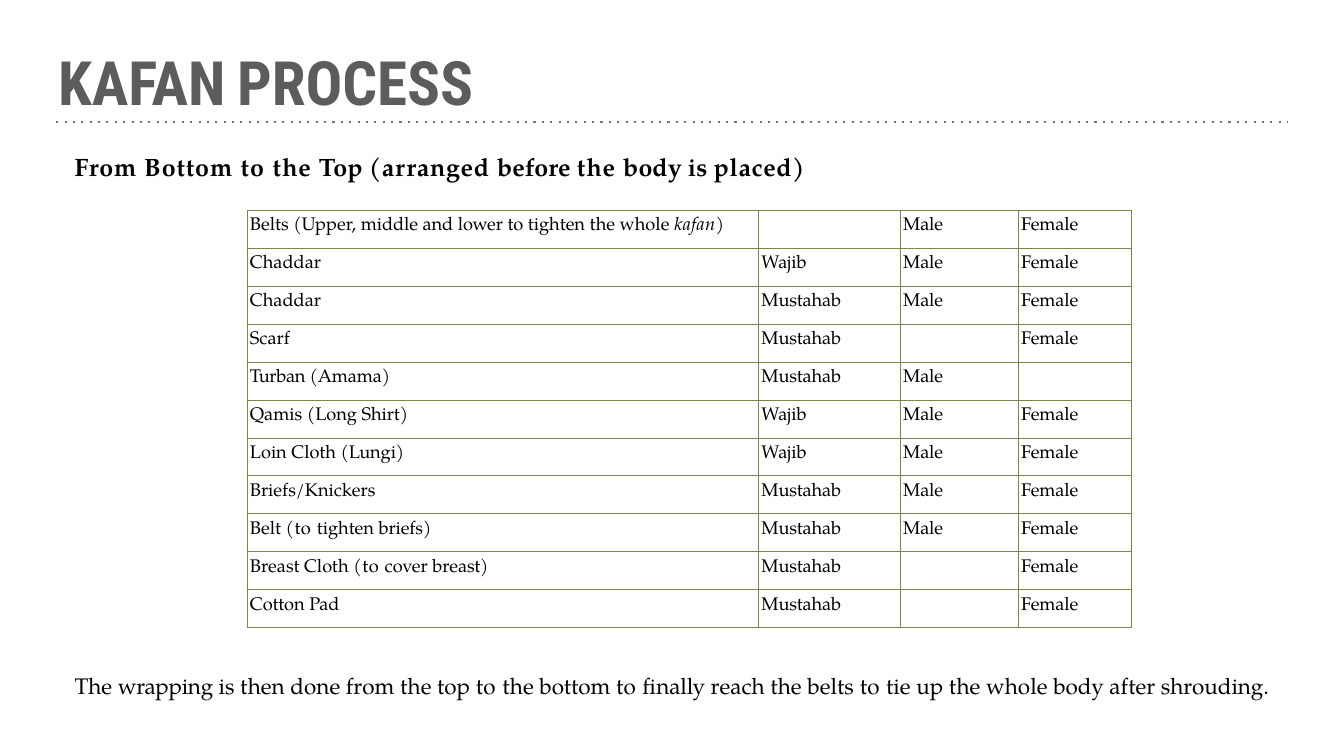
from lxml import etree
from pptx import Presentation
from pptx.dml.color import RGBColor
from pptx.enum.shapes import MSO_CONNECTOR
from pptx.enum.text import MSO_ANCHOR
from pptx.oxml.ns import qn
from pptx.util import Inches, Pt

STRAIGHT = MSO_CONNECTOR.STRAIGHT
TOP = MSO_ANCHOR.TOP

BLACK = RGBColor(0x00, 0x00, 0x00)
TITLE_GREY = RGBColor(0x5C, 0x5C, 0x5C)
RULE_GREY = RGBColor(0x74, 0x76, 0x76)
OLIVE = RGBColor(0x80, 0x82, 0x51)

TITLE_FONT = "Roboto Condensed"
SPACE_FONT = "Calibri"
BODY_FONT = "TeX Gyre Pagella"

# Runs are (text, letter spacing in points).
HEADING = [("From ", 0.9), ("Bottom ", 1.1), ("to ", 1.4), ("the ", 1), ("Top ", 0),
           ("(arranged ", 0.9), ("before ", 0), ("the ", 1), ("body is ", 0),
           ("placed)", 0.7)]
CLOSING = [("The ", 0), ("wrapping ", -0.4), ("is then done from the top ", 0),
           ("to ", 0.5), ("the bottom ", 0), ("to ", 0.5), ("finally ", -0.2),
           ("reach the belts ", 0), ("to ", 0.5), ("tie up the whole ", 0),
           ("body ", -0.2), ("after ", 0), ("shrouding.", -0.1)]

MALE, FEMALE = [("Male", -0.2)], [("Female", -0.1)]
WAJIB, MUSTAHAB = [("Wajib", 0)], [("Mustahab", -0.1)]
BELTS = [("Belts (Upper, ", 0), ("middle ", -0.1),
         ("and lower to tighten the whole ", 0), ("kafan", 0.5), (")", 0)]
CHADDAR = [("Chaddar", 0)]
KAFAN_ROWS = [
    (BELTS, [], MALE, FEMALE),
    (CHADDAR, WAJIB, MALE, FEMALE),
    (CHADDAR, MUSTAHAB, MALE, FEMALE),
    ([("Scarf", 0)], MUSTAHAB, [], FEMALE),
    ([("Turban ", -0.4), ("(Amama)", -0.1)], MUSTAHAB, MALE, []),
    ([("Qamis (Long ", 0), ("Shirt)", -0.1)], WAJIB, MALE, FEMALE),
    ([("Loin Cloth ", 0), ("(Lungi)", -0.1)], WAJIB, MALE, FEMALE),
    ([("Briefs/Knickers", 0)], MUSTAHAB, MALE, FEMALE),
    ([("Belt ", 0), ("(to ", 0.8), ("tighten ", 0), ("briefs)", -0.1)],
     MUSTAHAB, MALE, FEMALE),
    ([("Breast Cloth ", 0), ("(to ", 0.8), ("cover ", 0), ("breast)", -0.1)],
     MUSTAHAB, [], FEMALE),
    ([("Cotton ", 0), ("Pad", -0.2)], MUSTAHAB, [], FEMALE),
]


class SlideBuilder:
    """Draws on one slide; lengths are percentages of the slide's size."""

    def __init__(self, prs):
        self.width, self.height = prs.slide_width, prs.slide_height
        self.s = prs.slides.add_slide(prs.slide_layouts[6])

    def x(self, percent):
        return round(self.width * percent / 100)

    def y(self, percent):
        return round(self.height * percent / 100)

    def fill_paragraph(self, p, runs, size, font=BODY_FONT, color=BLACK, bold=False):
        p.font.name, p.font.size, p.font.bold = font, Pt(size), bold
        p.font.color.rgb = color
        for text, spacing in runs:
            r = p.add_run()
            r.text = text
            if spacing:
                r._r.get_or_add_rPr().set("spc", str(round(spacing * 100)))

    def text(self, left, top, width, height, runs, size, **style):
        sp = self.s.shapes.add_textbox(self.x(left), self.y(top),
                                       self.x(width), self.y(height))
        tf = sp.text_frame
        tf.word_wrap = True
        tf.margin_left = tf.margin_right = tf.margin_bottom = 0
        tf.margin_top = Inches(0.02)
        p = tf.paragraphs[0]
        self.fill_paragraph(p, runs, size, **style)
        return p

    def dotted_rule(self, left, right, top, color, weight):
        rule = self.s.shapes.add_connector(STRAIGHT, self.x(left), self.y(top),
                                           self.x(right), self.y(top))
        rule.line.color.rgb = color
        rule.line.width = Pt(weight)
        ln = rule.line._get_or_add_ln()
        etree.SubElement(ln, qn("a:prstDash"), val="dot")
        etree.SubElement(ln.getparent(), qn("a:effectLst"))

    def border(self, cell, color, weight):
        tcPr = cell._tc.get_or_add_tcPr()
        for side in ("a:lnL", "a:lnR", "a:lnT", "a:lnB"):
            ln = etree.SubElement(tcPr, qn(side), w=str(Pt(weight)))
            fill = etree.SubElement(ln, qn("a:solidFill"))
            etree.SubElement(fill, qn("a:srgbClr"), val=str(color))

    def table(self, left, top, col_widths, row_height, rows, size):
        frame = self.s.shapes.add_table(
            len(rows), len(col_widths), self.x(left), self.y(top),
            self.x(sum(col_widths)), self.y(row_height * len(rows)))
        table = frame.table
        table.first_row = table.horz_banding = False
        for column, width in zip(table.columns, col_widths):
            column.width = self.x(width)
        for i, row in enumerate(rows):
            table.rows[i].height = self.y(row_height)
            for j, runs in enumerate(row):
                cell = table.cell(i, j)
                cell.margin_left, cell.margin_top = Inches(0.05), Inches(0.12)
                cell.margin_right = cell.margin_bottom = 0
                cell.vertical_anchor = TOP
                self.border(cell, OLIVE, 1)
                cell.fill.background()
                self.fill_paragraph(cell.text_frame.paragraphs[0], runs, size)
        return table


def main():
    prs = Presentation()
    prs.slide_width, prs.slide_height = Inches(21.99), Inches(12.37)
    slide = SlideBuilder(prs)

    slide.dotted_rule(4.18, 95.82, 16.17, RULE_GREY, 2.47)
    title = slide.text(4.32, 5.74, 54.75, 9.94,
                       [("KAFAN", 0), (" ", -2.1), ("PROCESS", 0)], 72,
                       font=TITLE_FONT, color=TITLE_GREY, bold=True)
    gap = title.runs[1].font
    gap.name, gap.size = SPACE_FONT, Pt(59)

    slide.text(5.55, 19.81, 54.93, 4.2, HEADING, 29.5, bold=True)
    table = slide.table(18.37, 27.81, (38.06, 10.55, 8.78, 8.41), 5.02,
                        KAFAN_ROWS, 21.5)
    table.cell(0, 0).text_frame.paragraphs[0].runs[3].font.italic = True
    slide.text(5.55, 88.68, 90.86, 3.8, CLOSING, 26.5)

    prs.save("out.pptx")


if __name__ == "__main__":
    main()
